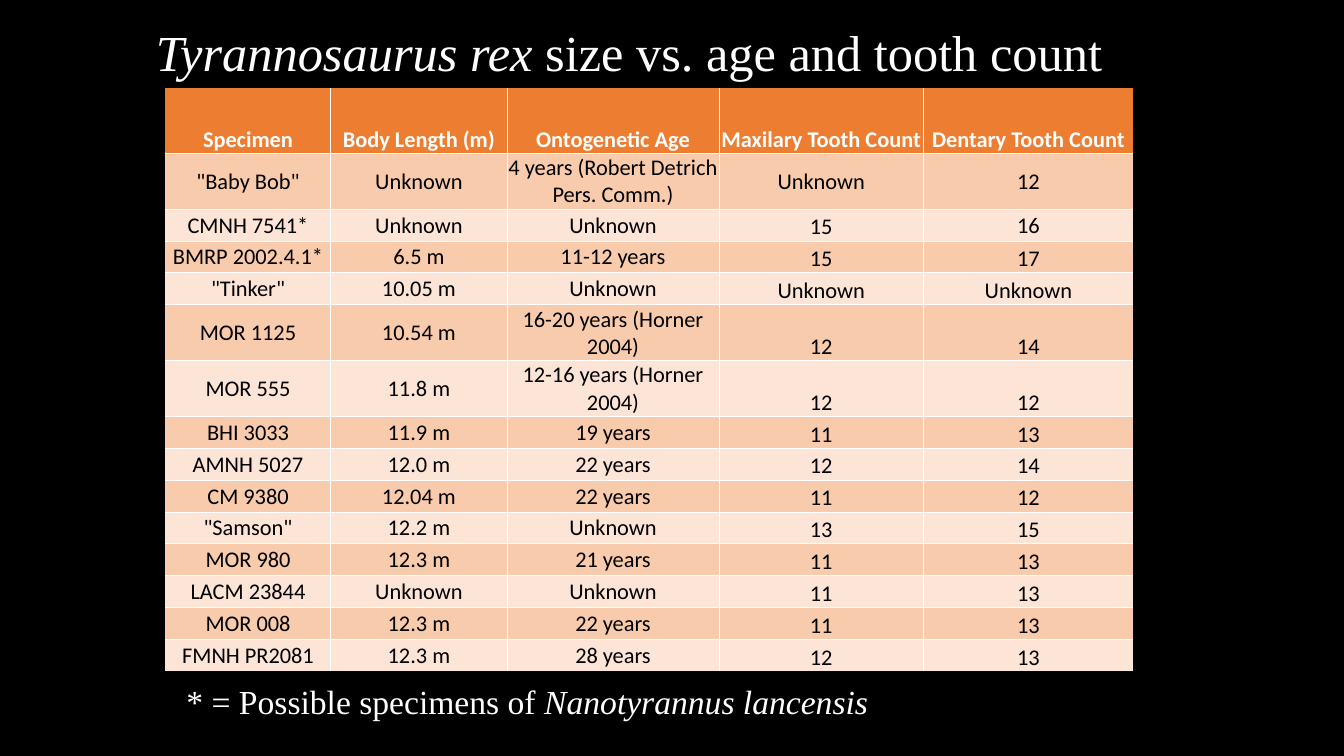
import pptx
import pptx.dml.color
import pptx.enum.text
import pptx.oxml.ns
import pptx.util
from lxml import etree

Inches = pptx.util.Inches
Pt = pptx.util.Pt
RGBColor = pptx.dml.color.RGBColor
ALIGN = pptx.enum.text.PP_ALIGN
ANCHOR = pptx.enum.text.MSO_ANCHOR
AUTO_SIZE = pptx.enum.text.MSO_AUTO_SIZE

BLACK = RGBColor(0x00, 0x00, 0x00)
WHITE = RGBColor(0xFF, 0xFF, 0xFF)
ORANGE = RGBColor(0xED, 0x7D, 0x31)
PEACH = RGBColor(0xF8, 0xCB, 0xAD)
PALE_PEACH = RGBColor(0xFC, 0xE4, 0xD6)

SPECIMENS = [
    ("Specimen", "Body Length (m)", "Ontogenetic Age", "Maxilary Tooth Count", "Dentary Tooth Count"),
    ('"Baby Bob"', "Unknown", "4 years (Robert Detrich Pers. Comm.)", "Unknown", "12"),
    ("CMNH 7541*", "Unknown", "Unknown", "15", "16"),
    ("BMRP 2002.4.1*", "6.5 m", "11-12 years", "15", "17"),
    ('"Tinker"', "10.05 m", "Unknown", "Unknown", "Unknown"),
    ("MOR 1125", "10.54 m", "16-20 years (Horner 2004)", "12", "14"),
    ("MOR 555", "11.8 m", "12-16 years (Horner 2004)", "12", "12"),
    ("BHI 3033", "11.9 m", "19 years", "11", "13"),
    ("AMNH 5027", "12.0 m", "22 years", "12", "14"),
    ("CM 9380", "12.04 m", "22 years", "11", "12"),
    ('"Samson"', "12.2 m", "Unknown", "13", "15"),
    ("MOR 980", "12.3 m", "21 years", "11", "13"),
    ("LACM 23844", "Unknown", "Unknown", "11", "13"),
    ("MOR 008", "12.3 m", "22 years", "11", "13"),
    ("FMNH PR2081", "12.3 m", "28 years", "12", "13"),
]
COLUMN_WIDTHS = [1.64, 1.75, 2.1, 2.03, 2.08]
TABLE_HEIGHT = 5.78
HEADER_HEIGHT = 0.65
TWO_LINE_HEIGHT = 0.55
TWO_LINE_ROWS = (1, 5, 6)
# Cells in the tooth count columns that stay vertically centred
CENTRED_COUNTS = {(1, 3), (1, 4), (2, 4)}


def add_run(paragraph, text, font_name, size, color, bold=False, italic=False):
    run = paragraph.add_run()
    run.text = text
    run.font.name = font_name
    run.font.size = Pt(size)
    run.font.color.rgb = color
    run.font.bold = bold
    run.font.italic = italic


def set_borders(cell, visible_sides):
    properties = cell._tc.get_or_add_tcPr()
    for position, side in enumerate("LRTB"):
        line = etree.Element(pptx.oxml.ns.qn(f"a:ln{side}"), w=str(Pt(0.5)))
        if side in visible_sides:
            fill = etree.SubElement(line, pptx.oxml.ns.qn("a:solidFill"))
            etree.SubElement(fill, pptx.oxml.ns.qn("a:srgbClr"), val=str(WHITE))
        else:
            etree.SubElement(line, pptx.oxml.ns.qn("a:noFill"))
        properties.insert(position, line)


presentation = pptx.Presentation()
presentation.slide_width = Inches(13.33)
presentation.slide_height = Inches(7.5)
slide = presentation.slides.add_slide(presentation.slide_layouts[5])
slide.background.fill.solid()
slide.background.fill.fore_color.rgb = BLACK

# Title
title = slide.shapes.title
title.left, title.top = Inches(1.24), Inches(0.16)
title.width, title.height = Inches(10), Inches(0.71)
title.text_frame.auto_size = AUTO_SIZE.NONE
title.text_frame.vertical_anchor = ANCHOR.TOP
heading = title.text_frame.paragraphs[0]
heading.alignment = ALIGN.CENTER
add_run(heading, "Tyrannosaurus rex ", "Times New Roman", 36, WHITE, italic=True)
add_run(heading, "size vs. age and tooth count", "Times New Roman", 36, WHITE)

# Specimen table
last_row, last_column = len(SPECIMENS) - 1, len(COLUMN_WIDTHS) - 1
specimen_table = slide.shapes.add_table(
    len(SPECIMENS), len(COLUMN_WIDTHS), Inches(1.64), Inches(0.87),
    Inches(sum(COLUMN_WIDTHS)), Inches(TABLE_HEIGHT)).table
for column, width in zip(specimen_table.columns, COLUMN_WIDTHS):
    column.width = Inches(width)

one_line_height = ((TABLE_HEIGHT - HEADER_HEIGHT - len(TWO_LINE_ROWS) * TWO_LINE_HEIGHT)
                   / (last_row - len(TWO_LINE_ROWS)))
for r, values in enumerate(SPECIMENS):
    is_header = r == 0
    if is_header:
        row_height, row_color = HEADER_HEIGHT, ORANGE
    else:
        row_height = TWO_LINE_HEIGHT if r in TWO_LINE_ROWS else one_line_height
        row_color = PEACH if r % 2 else PALE_PEACH
    specimen_table.rows[r].height = Inches(row_height)

    for c, value in enumerate(values):
        cell = specimen_table.cell(r, c)
        cell.fill.solid()
        cell.fill.fore_color.rgb = row_color
        cell.margin_left = cell.margin_right = cell.margin_top = Inches(0.01)
        cell.margin_bottom = 0
        at_bottom = is_header or (c >= 3 and (r, c) not in CENTRED_COUNTS)
        cell.vertical_anchor = ANCHOR.BOTTOM if at_bottom else ANCHOR.MIDDLE
        entry = cell.text_frame.paragraphs[0]
        entry.alignment = ALIGN.CENTER
        add_run(entry, value, "Calibri", 16, WHITE if is_header else BLACK, bold=is_header)
        # White lines run only between cells
        inner_sides = {"L": c > 0, "R": c < last_column, "T": r > 0, "B": r < last_row}
        set_borders(cell, [side for side, inner in inner_sides.items() if inner])

# Footnote
footnote = slide.shapes.add_textbox(Inches(1.75), Inches(6.71), Inches(9.39), Inches(0.5))
footnote.text_frame.word_wrap = True
note = footnote.text_frame.paragraphs[0]
add_run(note, "* = Possible specimens of ", "Times New Roman", 24, WHITE)
add_run(note, "Nanotyrannus lancensis", "Times New Roman", 24, WHITE, italic=True)

presentation.save("out.pptx")
